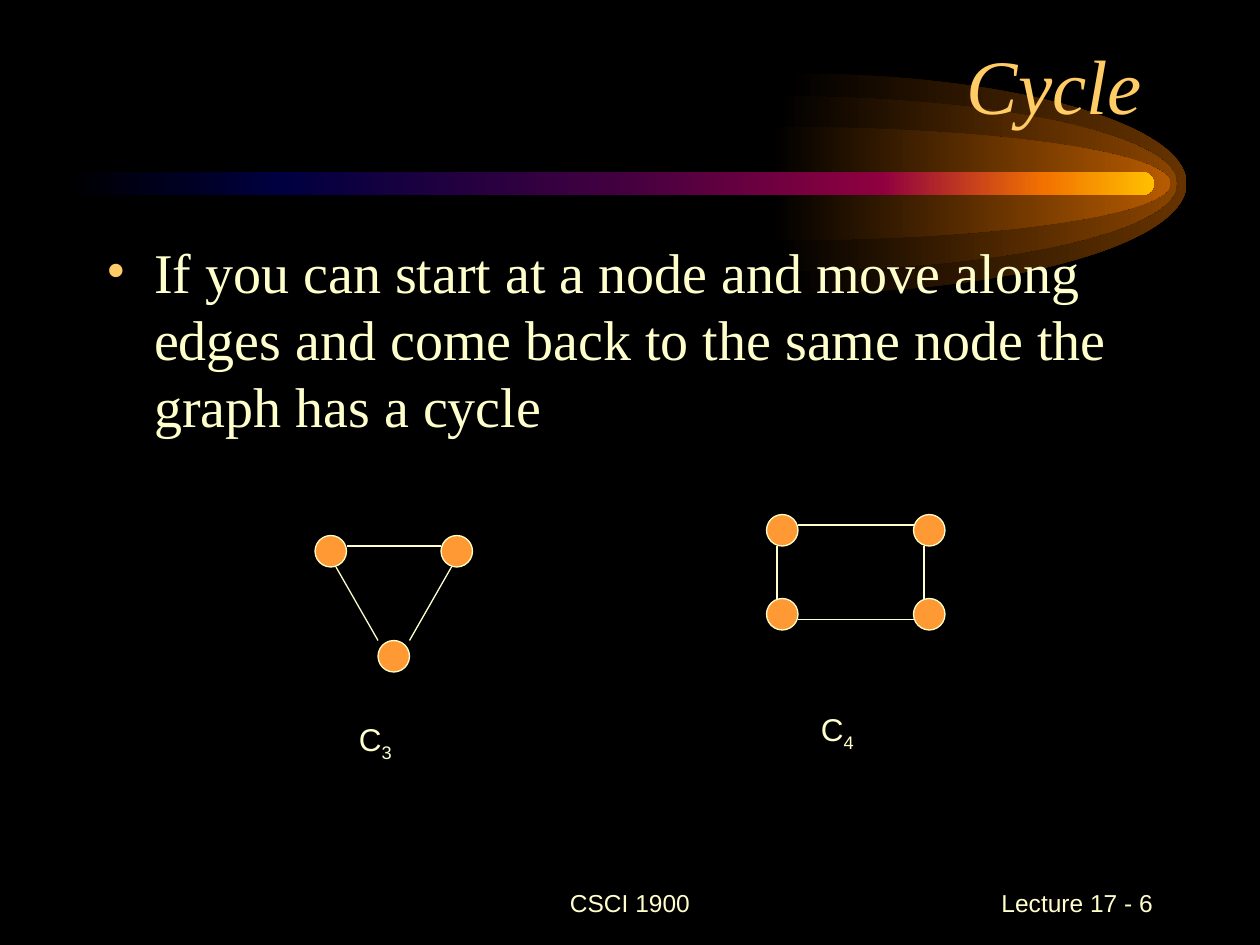
from lxml import etree
from pptx import Presentation
from pptx.dml.color import RGBColor
from pptx.enum.shapes import MSO_CONNECTOR, MSO_SHAPE
from pptx.enum.text import MSO_ANCHOR, PP_ALIGN
from pptx.oxml.ns import qn
from pptx.util import Pt

STRAIGHT = MSO_CONNECTOR.STRAIGHT
OVAL = MSO_SHAPE.OVAL
ROUNDED = MSO_SHAPE.ROUNDED_RECTANGLE
TOP, MIDDLE, BOTTOM = MSO_ANCHOR.TOP, MSO_ANCHOR.MIDDLE, MSO_ANCHOR.BOTTOM
LEFT, CENTER, RIGHT = PP_ALIGN.LEFT, PP_ALIGN.CENTER, PP_ALIGN.RIGHT

COLORS = {
    "background": "000000",
    "text": "FFFFCC",
    "accent": "FFCC66",
    "node": "FF9933",
    "glow_outer": "663300",
    "glow_middle": "894400",
    "glow_inner": "B75B00",
}
BEAM_STOPS = [(0, "000000"), (20, "000040"), (50, "400040"),
              (75, "8F0040"), (90, "F27300"), (100, "FFBF00")]
NODE_SIZE = 18
ARC = 0.55  # handle length of a quarter ellipse, as a share of its radius


def rgb(name):
    return RGBColor.from_string(COLORS[name])


def set_gradient(shape, stops):
    """Fill left to right with (percent, hex colour) stops."""
    shape.shadow.inherit = False
    shape.line.fill.background()
    shape.fill.gradient()
    shape.fill.gradient_angle = 0
    stop_list = shape._element.spPr.find(qn("a:gradFill")).find(qn("a:gsLst"))
    for stop in list(stop_list):
        stop_list.remove(stop)
    for percent, color in stops:
        stop = etree.SubElement(stop_list, qn("a:gs"), pos=str(percent * 1000))
        etree.SubElement(stop, qn("a:srgbClr"), val=color)


def add_run(paragraph, text, size, font="Arial", color="text", italic=False):
    run = paragraph.add_run()
    run.text = text
    run.font.size = Pt(size)
    run.font.name = font
    run.font.italic = italic
    run.font.color.rgb = rgb(color)
    return run


def format_frame(shape, anchor, alignment):
    frame = shape.text_frame
    frame.word_wrap = True
    frame.vertical_anchor = anchor
    frame.margin_left = frame.margin_right = Pt(7.2)
    frame.margin_top = frame.margin_bottom = Pt(3.6)
    paragraph = frame.paragraphs[0]
    paragraph.alignment = alignment
    return paragraph


def add_text_box(slide, box, anchor=TOP, alignment=LEFT):
    shape = slide.shapes.add_textbox(*map(Pt, box))
    return format_frame(shape, anchor, alignment)


def add_glow(slide, left, middle, width, radius, color):
    """Right half of an ellipse, fading in from the left."""
    builder = slide.shapes.build_freeform(Pt(left), Pt(middle - radius))
    builder.add_line_segments([(Pt(left + width), Pt(middle)),
                               (Pt(left), Pt(middle + radius))], close=True)
    shape = builder.convert_to_shape()
    # Bend the two straight sides into quarter ellipses
    curves = [
        [(ARC * width, 0), (width, radius * (1 - ARC)), (width, radius)],
        [(width, radius * (1 + ARC)), (ARC * width, 2 * radius), (0, 2 * radius)],
    ]
    sides = list(shape._element.spPr.iter(qn("a:lnTo")))
    for side, points in zip(sides, curves):
        curve = etree.Element(qn("a:cubicBezTo"))
        for x, y in points:
            etree.SubElement(curve, qn("a:pt"), x=str(int(Pt(x))), y=str(int(Pt(y))))
        side.getparent().replace(side, curve)
    set_gradient(shape, [(0, COLORS["background"]), (100, COLORS[color])])


def add_comet(slide, left, top, width, height):
    middle = top + height / 2
    right = left + width
    glow_width = 228
    for offset, radius, color in [(18.5, 63, "glow_outer"),
                                  (13, 50, "glow_middle"),
                                  (9.4, 32.5, "glow_inner")]:
        add_glow(slide, right + offset - glow_width, middle,
                 glow_width, radius, color)
    beam = slide.shapes.add_shape(ROUNDED, Pt(left), Pt(top), Pt(width), Pt(height))
    beam.adjustments[0] = 0.5
    set_gradient(beam, BEAM_STOPS)


def add_title(slide, left, top, width, height):
    title = slide.shapes.title
    title.left, title.top = Pt(left), Pt(top)
    title.width, title.height = Pt(width), Pt(height)
    add_run(format_frame(title, BOTTOM, RIGHT), "Cycle", 44,
            "Times New Roman", "accent", italic=True)
    # Bring the title in front of the comet
    slide.shapes._spTree.append(title._element)


def add_body(slide, *box):
    paragraph = add_text_box(slide, box)
    paragraph.space_before = Pt(6)
    properties = paragraph._p.get_or_add_pPr()
    properties.set("marL", str(Pt(27)))
    properties.set("indent", str(-Pt(27)))
    bullet_color = etree.SubElement(properties, qn("a:buClr"))
    etree.SubElement(bullet_color, qn("a:srgbClr"), val=COLORS["accent"])
    etree.SubElement(properties, qn("a:buFont"), typeface="Times New Roman")
    etree.SubElement(properties, qn("a:buChar"), char="•")
    add_run(paragraph, "If you can start at a node and move along edges and come "
            "back to the same node the graph has a cycle", 32, "Times New Roman")


def add_graph(slide, left, top, nodes, edges, label_at, order):
    """Draw a cycle; all positions are relative to its top left corner."""
    for x, y in nodes:
        node = slide.shapes.add_shape(OVAL, Pt(left + x), Pt(top + y),
                                      Pt(NODE_SIZE), Pt(NODE_SIZE))
        node.shadow.inherit = False
        node.fill.solid()
        node.fill.fore_color.rgb = rgb("node")
        node.line.color.rgb = rgb("text")
        node.line.width = Pt(0.75)
    for x1, y1, x2, y2 in edges:
        edge = slide.shapes.add_connector(STRAIGHT, Pt(left + x1), Pt(top + y1),
                                          Pt(left + x2), Pt(top + y2))
        edge.line.color.rgb = rgb("text")
        edge.line.width = Pt(0.75)
        etree.SubElement(edge._element.spPr, qn("a:effectLst"))
    label_x, label_y = label_at
    paragraph = add_text_box(slide, (left + label_x, top + label_y, 48, 29))
    add_run(paragraph, "C", 18)
    subscript = add_run(paragraph, order, 18)
    subscript.font._element.set("baseline", "-25000")


def add_footer(slide, left, top, width, height):
    course = add_text_box(slide, (left, top, 228, height), MIDDLE, CENTER)
    add_run(course, "CSCI 1900", 14)
    number_width = 150
    number = add_text_box(slide, (left + width - number_width, top,
                                  number_width, height), MIDDLE, RIGHT)
    add_run(number, " Lecture 17 - 6", 14)


def main():
    presentation = Presentation()
    presentation.slide_width, presentation.slide_height = Pt(720), Pt(540)
    slide = presentation.slides.add_slide(presentation.slide_layouts[5])
    slide.background.fill.solid()
    slide.background.fill.fore_color.rgb = rgb("background")

    add_comet(slide, 36, 98.4, 623.5, 13)
    add_footer(slide, 246, 498, 420, 36)
    add_title(slide, 48, 18, 612, 60)
    # Triangle
    add_graph(slide, 180, 306,
              nodes=[(0, 0), (72, 0), (36, 60)],
              edges=[(12, 18, 36, 60), (18, 6, 72, 6), (54, 60, 78, 18)],
              label_at=(18, 102), order="3")
    # Rectangle
    add_graph(slide, 438, 294,
              nodes=[(x, y) for y in (0, 48) for x in (0, 84)],
              edges=[(18, 6, 84, 6), (90, 18, 90, 48),
                     (84, 60, 18, 60), (6, 48, 6, 18)],
              label_at=(24, 108), order="4")
    add_body(slide, 54, 132, 612, 354)

    presentation.save("out.pptx")


if __name__ == "__main__":
    main()
